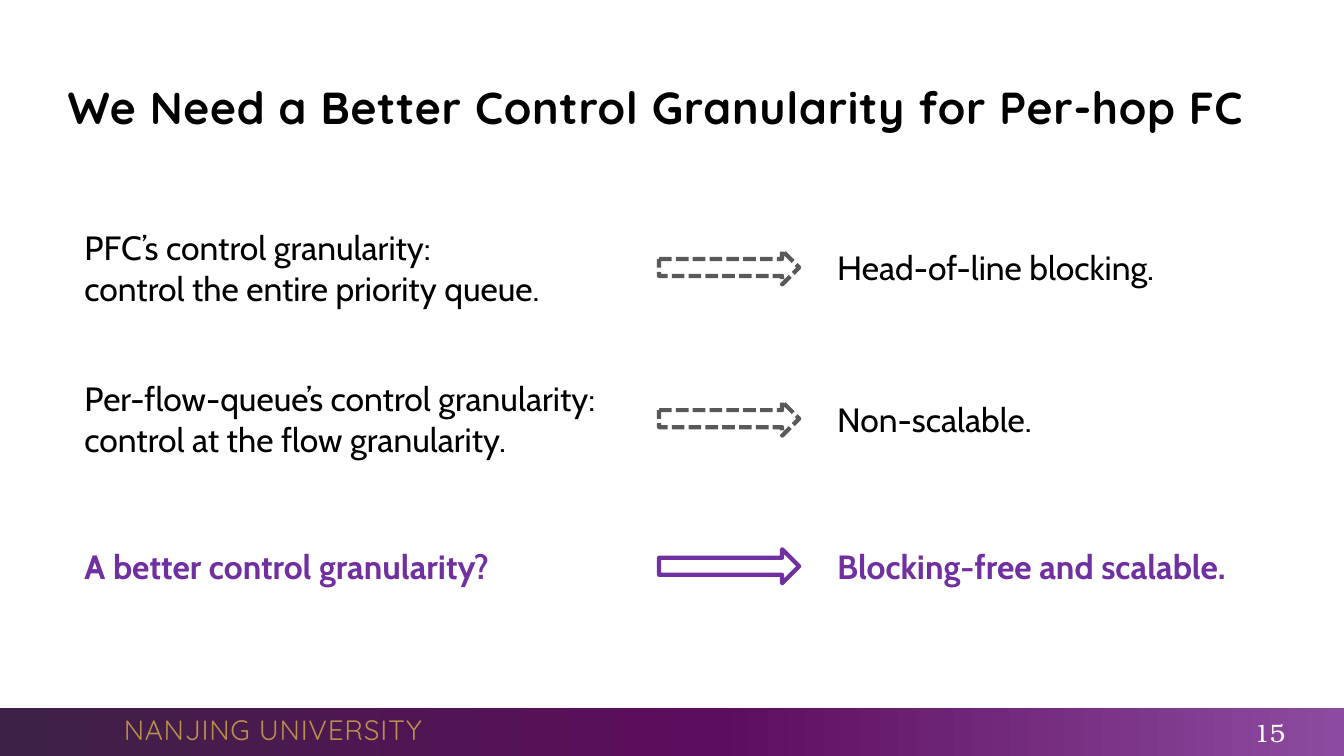
from copy import deepcopy
from dataclasses import dataclass

from pptx import Presentation
from pptx.dml.color import RGBColor
from pptx.enum.dml import MSO_LINE_DASH_STYLE as Dash
from pptx.enum.shapes import MSO_SHAPE as Shape
from pptx.enum.text import MSO_ANCHOR as Anchor, PP_ALIGN as Align
from pptx.oxml.ns import qn
from pptx.util import Cm, Pt


@dataclass(frozen=True)
class Theme:
    heading_font: str = "Quicksand"
    body_font: str = "Cabin"
    number_font: str = "TeX Gyre Bonum"
    title_size: int = 32
    body_size: int = 24
    footer_size: int = 20
    number_size: int = 18
    arrow_line: int = 3
    text: str = "000000"
    muted: str = "595959"
    accent: str = "7030A0"
    gold: str = "B88F4C"
    white: str = "FFFFFF"
    footer_stops: tuple = ((0, "3E2146"), (0.53, "5C0C5C"), (1, "8C4BA0"))


THEME = Theme()
PAGE_WIDTH, PAGE_HEIGHT = 33.87, 19.05
FOOTER_TOP = 17.83
CLAIM_LEFT, ARROW_LEFT, RESULT_LEFT = 1.88, 16.61, 20.85
ARROW_WIDTH, ARROW_HEIGHT = 3.53, 0.86
LINE_HEIGHT = 1.27

# Centre of the row, claim, lines it takes, result, highlighted
ROWS = [
    (6.74, "PFC’s control granularity:\ncontrol the entire priority queue.", 2,
     "Head-of-line blocking.", False),
    (10.55, "Per-flow-queue’s control granularity: control at the flow granularity.", 2,
     "Non-scalable.", False),
    (14.27, "A better control granularity?", 1, "Blocking-free and scalable.", True),
]


def write(box, text, font, size, color, bold=False, align=Align.LEFT, spacing=0):
    """Fill a box with middle-anchored text; spacing is in hundredths of a point."""
    frame = box.text_frame
    frame.text = text
    frame.word_wrap = True
    frame.vertical_anchor = Anchor.MIDDLE
    for para in frame.paragraphs:
        para.alignment = align
        for span in para.runs:
            span.font.name = font
            span.font.size = Pt(size)
            span.font.bold = bold
            span.font.color.rgb = RGBColor.from_string(color)
            if spacing:
                span.font._element.set("spc", str(spacing))


def add_text(page, left, top, width, height, *style, **options):
    box = page.shapes.add_textbox(Cm(left), Cm(top), Cm(width), Cm(height))
    write(box, *style, **options)


def add_title(page, text):
    title = page.shapes.title
    title.left, title.top, title.width, title.height = Cm(1.45), Cm(1.7), Cm(30.48), Cm(1.96)
    write(title, text, THEME.heading_font, THEME.title_size, THEME.text, bold=True, spacing=50)


def add_footer(page, owner, number):
    height = PAGE_HEIGHT - FOOTER_TOP
    bar = page.shapes.add_shape(
        Shape.RECTANGLE, 0, Cm(FOOTER_TOP), Cm(PAGE_WIDTH), Cm(height))
    bar.shadow.inherit = False
    bar.line.fill.background()
    bar.fill.gradient()
    bar.fill.gradient_angle = 0
    stop_list = next(bar._element.iter(qn("a:gsLst")))
    stop_list.append(deepcopy(stop_list[0]))
    for stop, (position, color) in zip(bar.fill.gradient_stops, THEME.footer_stops):
        stop.position = position
        stop.color.rgb = RGBColor.from_string(color)
    add_text(page, 2.87, FOOTER_TOP, 9, 1.12, owner,
             THEME.heading_font, THEME.footer_size, THEME.gold, spacing=50)
    add_text(page, 29.95, 18.01, 2.69, 0.89, number,
             THEME.number_font, THEME.number_size, THEME.white, align=Align.RIGHT)


def add_arrow(page, centre, color, dashed):
    arrow = page.shapes.add_shape(
        Shape.RIGHT_ARROW, Cm(ARROW_LEFT), Cm(centre - ARROW_HEIGHT / 2),
        Cm(ARROW_WIDTH), Cm(ARROW_HEIGHT))
    arrow.shadow.inherit = False
    arrow.fill.background()
    arrow.line.color.rgb = RGBColor.from_string(color)
    arrow.line.width = Pt(THEME.arrow_line)
    if dashed:
        arrow.line.dash_style = Dash.SQUARE_DOT


def add_row(page, centre, claim, lines, result, highlighted):
    color = THEME.accent if highlighted else THEME.text
    claim_height = LINE_HEIGHT + (lines - 1) * 1.04
    for left, width, height, text in (
        (CLAIM_LEFT, 15.06, claim_height, claim),
        (RESULT_LEFT, 11.48, LINE_HEIGHT, result),
    ):
        add_text(page, left, centre - height / 2, width, height, text,
                 THEME.body_font, THEME.body_size, color, bold=highlighted)
    add_arrow(page, centre, THEME.accent if highlighted else THEME.muted, not highlighted)


def main():
    deck = Presentation()
    deck.slide_width, deck.slide_height = Cm(PAGE_WIDTH), Cm(PAGE_HEIGHT)
    page = deck.slides.add_slide(deck.slide_layouts.get_by_name("Title Only"))
    add_footer(page, "NANJING UNIVERSITY", "15")
    add_title(page, "We Need a Better Control Granularity for Per-hop FC")
    for row in ROWS:
        add_row(page, *row)
    deck.save("out.pptx")


if __name__ == "__main__":
    main()
